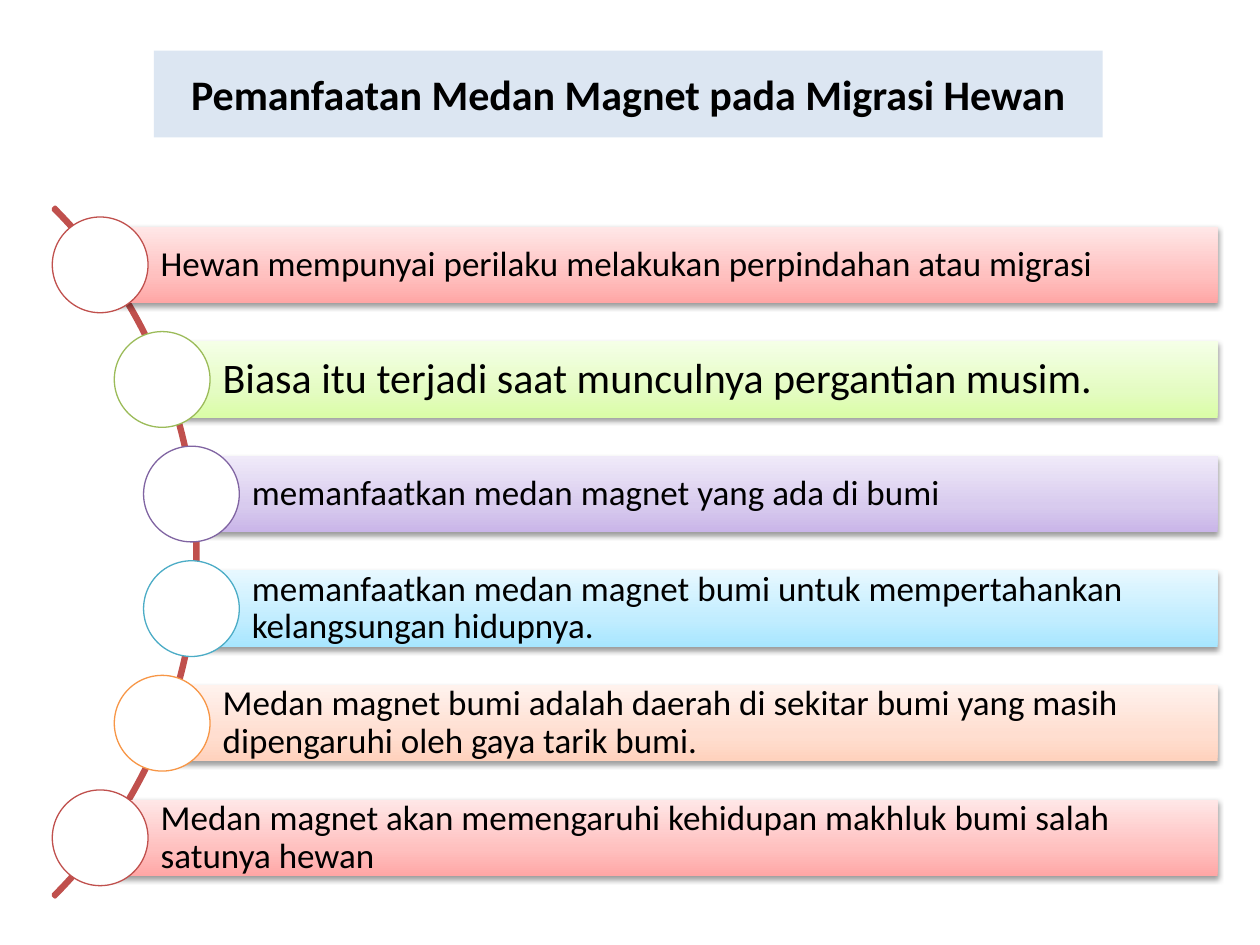
"""Builds a slide on how migrating animals use the magnetic field."""
from copy import deepcopy

from lxml import etree
from pptx import Presentation
from pptx.dml.color import RGBColor
from pptx.enum.shapes import MSO_SHAPE
from pptx.enum.text import MSO_ANCHOR, PP_ALIGN
from pptx.oxml.ns import qn
from pptx.util import Cm, Pt

ARC, BAR, CIRCLE = MSO_SHAPE.BLOCK_ARC, MSO_SHAPE.RECTANGLE, MSO_SHAPE.OVAL
MIDDLE, LEFT, CENTER = MSO_ANCHOR.MIDDLE, PP_ALIGN.LEFT, PP_ALIGN.CENTER

BLACK = RGBColor(0x00, 0x00, 0x00)
WHITE = RGBColor(0xFF, 0xFF, 0xFF)
PALE_BLUE = RGBColor(0xDC, 0xE6, 0xF2)
RED = RGBColor(0xC0, 0x50, 0x4D)
GREEN = RGBColor(0x9B, 0xBB, 0x59)
PURPLE = RGBColor(0x80, 0x64, 0xA2)
AQUA = RGBColor(0x4B, 0xAC, 0xC6)
ORANGE = RGBColor(0xF7, 0x96, 0x46)
TINTS = {
    RED: (RGBColor(0xFF, 0xA6, 0xA5), RGBColor(0xFF, 0xC0, 0xBF), RGBColor(0xFF, 0xE7, 0xE7)),
    GREEN: (RGBColor(0xDA, 0xFD, 0xA7), RGBColor(0xE4, 0xFC, 0xC2), RGBColor(0xF5, 0xFF, 0xE7)),
    PURPLE: (RGBColor(0xC9, 0xB5, 0xE8), RGBColor(0xD8, 0xCB, 0xEE), RGBColor(0xF0, 0xEA, 0xF9)),
    AQUA: (RGBColor(0xA7, 0xE6, 0xFF), RGBColor(0xC1, 0xED, 0xFF), RGBColor(0xE7, 0xF8, 0xFF)),
    ORANGE: (RGBColor(0xFF, 0xD2, 0xBD), RGBColor(0xFF, 0xDE, 0xD0), RGBColor(0xFF, 0xF2, 0xED)),
}
STOPS = (0, 0.35, 1)

FIRST_TOP, PITCH = 4.57, 2.31
BAR_HEIGHT, BAR_RIGHT = 1.54, 24.55
DIAMETER = 1.93
ITEMS = [
    (2.02, RED, 20, "Hewan mempunyai perilaku melakukan perpindahan atau migrasi"),
    (3.27, GREEN, 24, "Biasa itu terjadi saat munculnya pergantian musim."),
    (3.86, PURPLE, 20, "memanfaatkan medan magnet yang ada di bumi"),
    (3.86, AQUA, 20, "memanfaatkan medan magnet bumi untuk mempertahankan kelangsungan hidupnya."),
    (3.27, ORANGE, 20, "Medan magnet bumi adalah daerah di sekitar bumi yang masih "
                       "dipengaruhi oleh gaya tarik bumi."),
    (2.02, RED, 20, "Medan magnet akan memengaruhi kehidupan makhluk bumi salah satunya hewan"),
]


class MigrationPage:
    """Holds the style and the current slide."""

    font = "Calibri"

    def __init__(self, deck):
        self.page = deck.slides.add_slide(deck.slide_layouts[5])

    def add_text(self, box, text, size, align, bold=False):
        frame = box.text_frame
        frame.word_wrap = True
        frame.vertical_anchor = MIDDLE
        para = frame.paragraphs[0]
        para.alignment = align
        span = para.add_run()
        span.text = text
        span.font.name = self.font
        span.font.size = Pt(size)
        span.font.bold = bold
        span.font.color.rgb = BLACK
        return frame

    def title(self, text, left, top, width, height):
        box = self.page.shapes.title
        box.left, box.top, box.width, box.height = Cm(left), Cm(top), Cm(width), Cm(height)
        box.fill.solid()
        box.fill.fore_color.rgb = PALE_BLUE
        self.add_text(box, text, 24, CENTER, bold=True)

    def shape(self, kind, left, top, width, height):
        shape = self.page.shapes.add_shape(kind, Cm(left), Cm(top), Cm(width), Cm(height))
        shape.shadow.inherit = False
        return shape

    def arc(self, left, top, size):
        arc = self.shape(ARC, left, top, size, size)
        for index, value in enumerate((189, 27, 0.003)):
            arc.adjustments[index] = value
        arc.fill.background()
        arc.line.color.rgb = RED
        arc.line.width = Pt(2)

    def bar(self, left, top, color, size, text):
        bar = self.shape(BAR, left, top, BAR_RIGHT - left, BAR_HEIGHT)
        bar.line.fill.background()
        self.gradient(bar, TINTS[color])
        self.drop_shadow(bar)
        frame = self.add_text(bar, text, size, LEFT)
        frame.margin_left = Cm(1.22)
        frame.margin_top = frame.margin_right = frame.margin_bottom = Cm(0.15)
        frame.paragraphs[0].line_spacing = 0.9

    def gradient(self, shape, tints):
        shape.fill.gradient()
        shape.fill.gradient_angle = 90
        stop_list = shape._element.spPr.find(".//" + qn("a:gsLst"))
        stop_list.insert(1, deepcopy(stop_list[0]))
        for stop, position, tint in zip(shape.fill.gradient_stops, STOPS, tints):
            stop.position = position
            stop.color.rgb = tint

    def drop_shadow(self, shape):
        effects = shape._element.spPr.find(qn("a:effectLst"))
        shadow = etree.SubElement(effects, qn("a:outerShdw"), blurRad="40000", dist="20000",
                                  dir="5400000", rotWithShape="0")
        color = etree.SubElement(shadow, qn("a:srgbClr"), val=str(BLACK))
        etree.SubElement(color, qn("a:alpha"), val="38000")

    def circle(self, center_x, center_y, color):
        radius = DIAMETER / 2
        circle = self.shape(CIRCLE, center_x - radius, center_y - radius, DIAMETER, DIAMETER)
        circle.fill.solid()
        circle.fill.fore_color.rgb = WHITE
        circle.line.color.rgb = color
        circle.line.width = Pt(0.75)


def main():
    deck = Presentation()
    deck.slide_width, deck.slide_height = Cm(25.4), Cm(19.05)
    page = MigrationPage(deck)
    page.title("Pemanfaatan Medan Magnet pada Migrasi Hewan", 3.1, 1.02, 19.13, 1.75)
    page.arc(-15.67, 1.3, 19.66)
    for row, (left, color, size, text) in enumerate(ITEMS):
        top = FIRST_TOP + row * PITCH
        page.bar(left, top, color, size, text)
        page.circle(left, top + BAR_HEIGHT / 2, color)
    deck.save("out.pptx")


if __name__ == "__main__":
    main()
